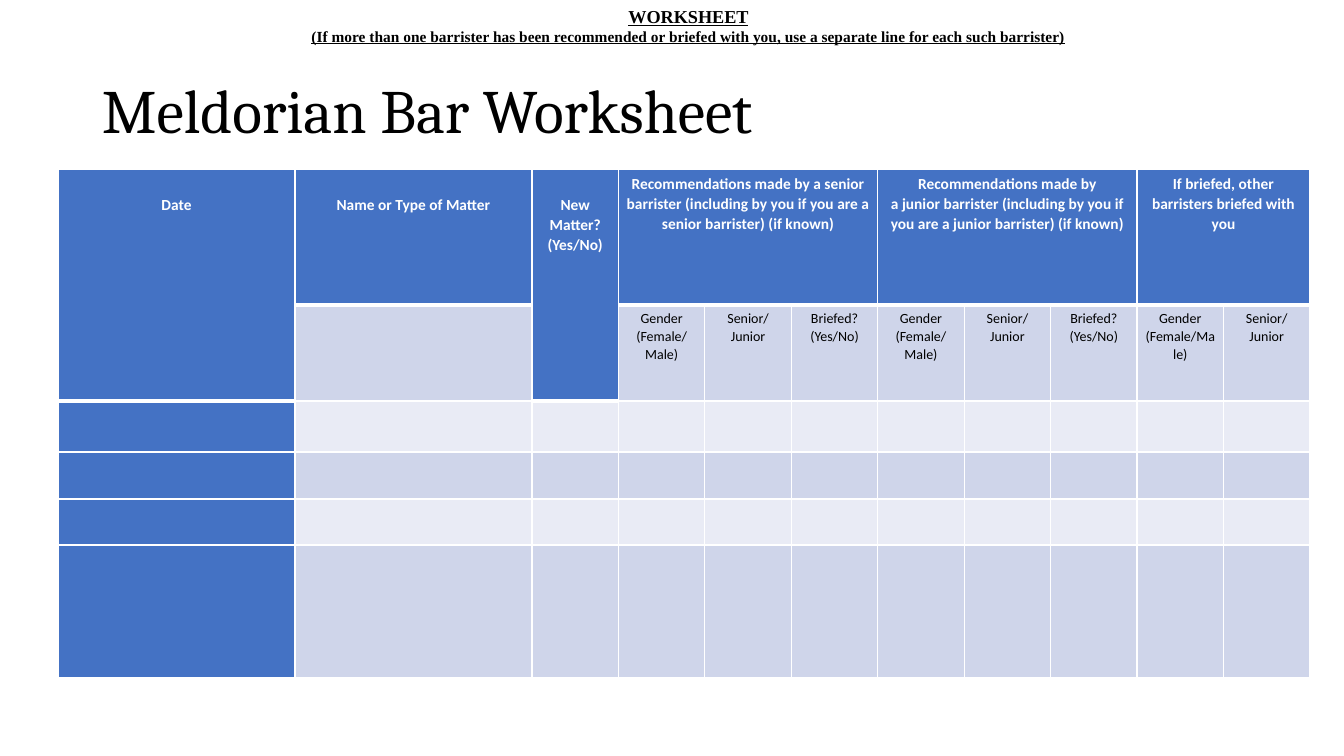
"""Build the Meldorian Bar worksheet slide with its briefing table."""
import pptx
import pptx.dml.color
import pptx.enum.text
import pptx.oxml
import pptx.oxml.ns
import pptx.util

PX = 914400 / 100.8
COLOURS = {"header": "4472C4", "band_dark": "CFD5EA", "band_light": "E9EBF5",
           "white": "FFFFFF", "black": "000000"}
CENTER = pptx.enum.text.PP_ALIGN.CENTER
MIDDLE = pptx.enum.text.MSO_ANCHOR.MIDDLE


def px(length):
    return pptx.util.Emu(round(length * PX))


def write(frame, lines, font_name, sizes, colour, bold=False, underline=None,
          align=None, spacing=None):
    frame.word_wrap = True
    for index, (line, size) in enumerate(zip(lines, sizes)):
        paragraph = frame.add_paragraph() if index else frame.paragraphs[0]
        paragraph.text = line
        paragraph.alignment = align
        paragraph.line_spacing = spacing
        font = paragraph.font
        font.name, font.size = font_name, pptx.util.Pt(size)
        font.bold, font.underline = bold, underline
        font.color.rgb = pptx.dml.color.RGBColor.from_string(COLOURS[colour])


presentation = pptx.Presentation()
presentation.slide_width, presentation.slide_height = px(1344), px(756)
slide = presentation.slides.add_slide(presentation.slide_layouts[6])

title = slide.shapes.add_textbox(px(92), px(40), px(1159), px(147)).text_frame
title.vertical_anchor = MIDDLE
write(title, ["Meldorian Bar Worksheet"], "Cambria", [44], "black", spacing=0.9)

row_heights = [136, 96, 51, 47, 46, 133]
column_widths = [237, 237] + [778 / 9] * 9
worksheet = slide.shapes.add_table(
    len(row_heights), len(column_widths), px(58), px(169),
    px(sum(column_widths)), px(sum(row_heights))).table
worksheet.first_row = worksheet.horz_banding = False
for row, height in zip(worksheet.rows, row_heights):
    row.height = px(height)
for column, width in zip(worksheet.columns, column_widths):
    column.width = px(width)

header_cells = {(0, c) for c in range(len(column_widths))} | {(1, 0), (1, 2)}
for r in range(len(row_heights)):
    for c in range(len(column_widths)):
        cell = worksheet.cell(r, c)
        cell.margin_left = cell.margin_right = px(7)
        cell.margin_top = cell.margin_bottom = px(4)
        top = 3 if (r - 1, c) in header_cells else 1
        bottom = 3 if (r, c) in header_cells else 1
        for side, points in (("L", 1), ("R", 1), ("T", top), ("B", bottom)):
            cell._tc.get_or_add_tcPr().append(pptx.oxml.parse_xml(
                f'<a:ln{side} {pptx.oxml.ns.nsdecls("a")} w="{pptx.util.Pt(points)}">'
                f'<a:solidFill><a:srgbClr val="{COLOURS["white"]}"/></a:solidFill>'
                f'</a:ln{side}>'))
        if c == 0 or (r, c) in header_cells:
            fill = "header"
        else:
            fill = "band_dark" if r % 2 else "band_light"
        cell.fill.solid()
        cell.fill.fore_color.rgb = pptx.dml.color.RGBColor.from_string(COLOURS[fill])

headings = [
    (0, 2, 1, 25, ["Date"]),
    (1, 1, 1, 25, ["Name or Type of Matter"]),
    (2, 2, 1, 25, ["New Matter?", "(Yes/No)"]),
    (3, 1, 3, 4, ["Recommendations made by a senior barrister (including by you "
                  "if you are a senior barrister) (if known)"]),
    (6, 1, 3, 4, ["Recommendations made by",
                  "a junior barrister (including by you if you are a junior "
                  "barrister) (if known)"]),
    (9, 1, 2, 4, ["If briefed, other barristers briefed with you"]),
]
for c, row_span, column_span, top_margin, lines in headings:
    heading = worksheet.cell(0, c)
    if row_span * column_span > 1:
        heading.merge(worksheet.cell(row_span - 1, c + column_span - 1))
    heading.margin_top = px(top_margin)
    write(heading.text_frame, lines, "Calibri", [11] * len(lines), "white",
          bold=True, align=CENTER, spacing=1.07)

seniority = ["Senior/", "Junior"]
subheadings = [
    ["Gender", "(Female/Male)"], seniority, ["Briefed?", "(Yes/No)"],
    ["Gender (Female/", "Male)"], seniority, ["Briefed? (Yes/No)"],
    ["Gender (Female/Male)"], seniority,
]
for c, lines in enumerate(subheadings, start=3):
    write(worksheet.cell(1, c).text_frame, lines, "Calibri", [10] * len(lines),
          "black", align=CENTER, spacing=1.07)

instruction = slide.shapes.add_textbox(px(-119), px(0), px(1615), px(50)).text_frame
instruction.vertical_anchor = MIDDLE
write(instruction,
      ["WORKSHEET",
       "(If more than one barrister has been recommended or briefed with you, "
       "use a separate line for each such barrister)"],
      "Times New Roman", [13, 11], "black", bold=True, underline=True, align=CENTER)

presentation.save("out.pptx")
